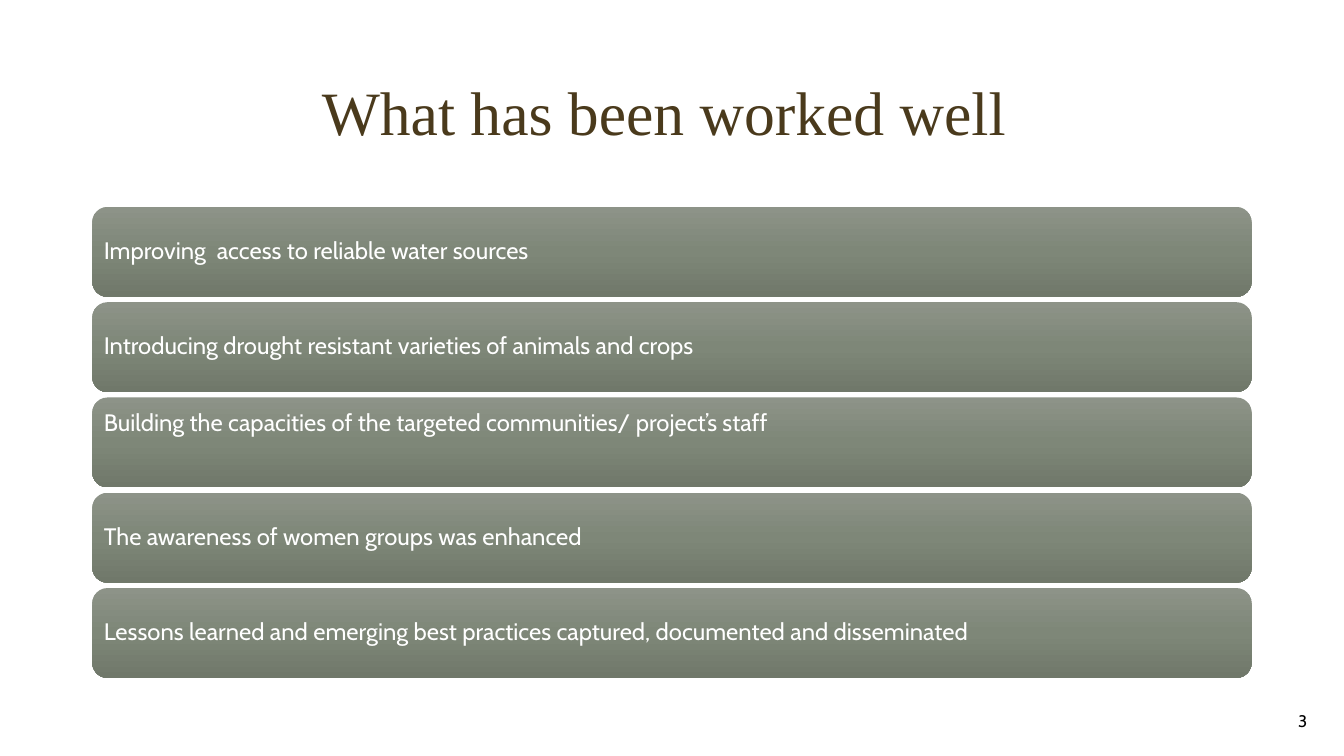
from copy import deepcopy

from pptx import Presentation
from pptx.dml.color import RGBColor
from pptx.enum.shapes import MSO_SHAPE
from pptx.enum.text import MSO_ANCHOR, PP_ALIGN
from pptx.oxml.ns import qn
from pptx.util import Pt

COLORS = {
    "title": "4A3A1C",
    "number": "000000",
    "achievement": "FFFFFF",
    "bar_top": "8D9388",
    "bar_middle": "7E8778",
    "bar_bottom": "70786A",
}
ACHIEVEMENTS = [
    "Improving  access to reliable water sources",
    "Introducing drought resistant varieties of animals and crops",
    "Building the capacities of the targeted communities/ project’s staff",
    "The awareness of women groups was enhanced",
    "Lessons learned and emerging best practices captured, documented and disseminated",
]
RAISED_ACHIEVEMENT = 2
BAR_GAP = 3.9
BAR_INSET = 5.04
RAISED_INSET = 31


def color(name):
    return RGBColor.from_string(COLORS[name])


def write(frame, text, font_name, size, color_name, align, line_spacing=None):
    frame.word_wrap = True
    frame.vertical_anchor = MSO_ANCHOR.MIDDLE
    paragraph = frame.paragraphs[0]
    paragraph.text = text
    paragraph.alignment = align
    paragraph.line_spacing = line_spacing
    paragraph.font.name = font_name
    paragraph.font.size = Pt(size)
    paragraph.font.color.rgb = color(color_name)


def add_title(slide, left, top, width, height):
    title = slide.shapes.add_textbox(Pt(left), Pt(top), Pt(width), Pt(height))
    write(title.text_frame, "What has been worked well ", "Times New Roman", 44,
          "title", PP_ALIGN.CENTER, 0.9)


def add_slide_number(slide, left, top, width, height):
    number = slide.shapes.add_textbox(Pt(left), Pt(top), Pt(width), Pt(height))
    write(number.text_frame, "3", "Cabin", 12, "number", PP_ALIGN.RIGHT)


def shade(bar):
    bar.fill.gradient()
    bar.fill.gradient_angle = 270
    stop_list = bar._element.spPr.find(qn("a:gradFill")).find(qn("a:gsLst"))
    stop_list.insert(1, deepcopy(stop_list[0]))
    stops = zip(bar.fill.gradient_stops, (0, 0.5, 1), ("bar_top", "bar_middle", "bar_bottom"))
    for stop, position, name in stops:
        stop.position = position
        stop.color.rgb = color(name)


def add_achievements(slide, left, top, width, height):
    pitch = (height + BAR_GAP) / len(ACHIEVEMENTS)
    for index, achievement in enumerate(ACHIEVEMENTS):
        bar = slide.shapes.add_shape(
            MSO_SHAPE.ROUNDED_RECTANGLE,
            Pt(left), Pt(top + index * pitch), Pt(width), Pt(pitch - BAR_GAP))
        bar.shadow.inherit = False
        bar.line.fill.background()
        shade(bar)
        frame = bar.text_frame
        frame.margin_left = frame.margin_right = frame.margin_top = Pt(BAR_INSET)
        frame.margin_bottom = Pt(RAISED_INSET if index == RAISED_ACHIEVEMENT else BAR_INSET)
        write(frame, achievement, "Cabin", 17, "achievement", PP_ALIGN.LEFT, 0.9)


def main():
    presentation = Presentation()
    presentation.slide_width = Pt(960)
    presentation.slide_height = Pt(540)
    slide = presentation.slides.add_slide(presentation.slide_layouts[6])
    add_title(slide, 66, 30, 828, 104.4)
    add_slide_number(slide, 725, 500.4, 216, 28.8)
    add_achievements(slide, 66, 147.8, 828, 336.4)
    presentation.save("out.pptx")


if __name__ == "__main__":
    main()
